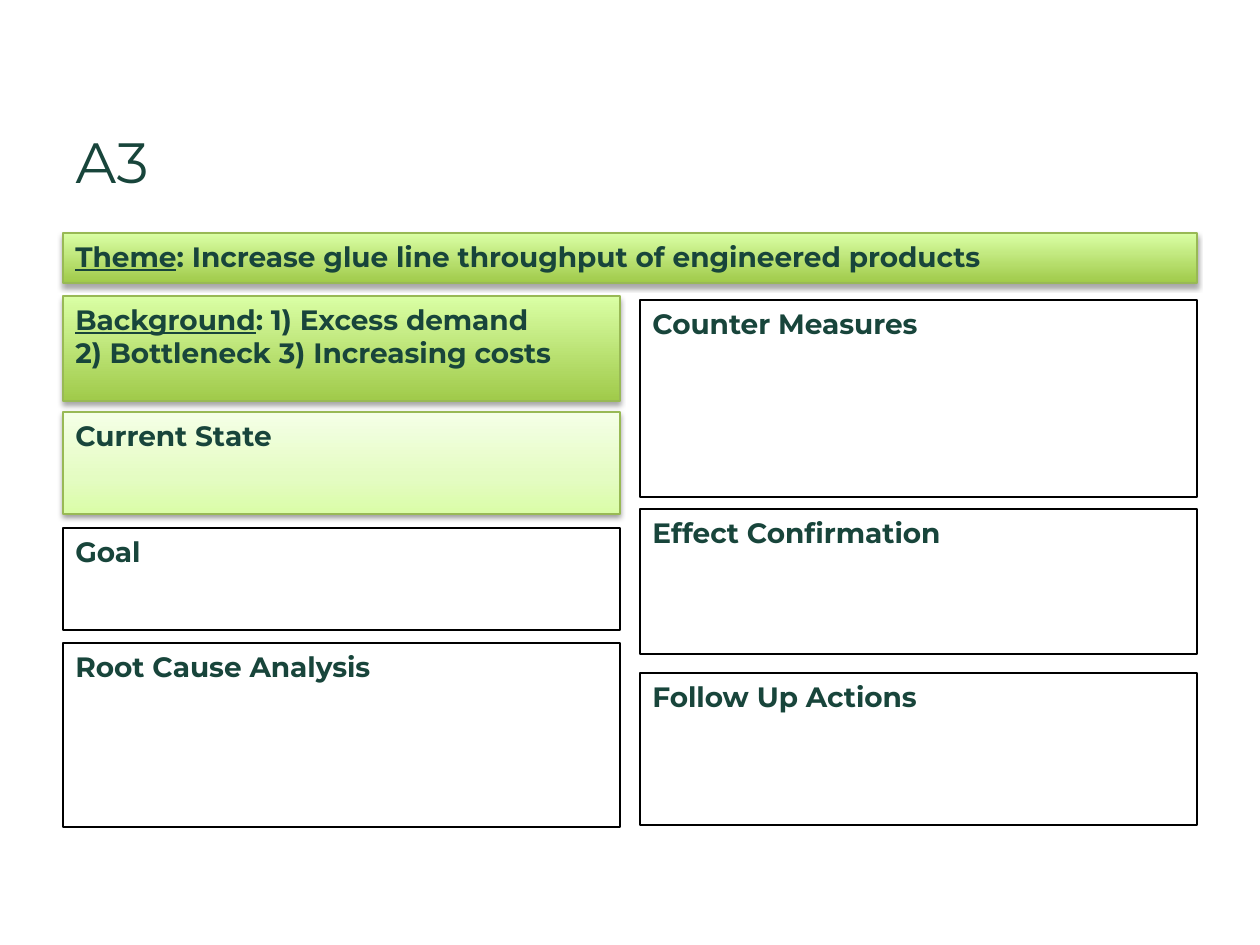
from dataclasses import dataclass
from typing import Optional

import pptx
import pptx.dml.color
import pptx.enum.shapes
import pptx.enum.text
import pptx.oxml
import pptx.oxml.ns
import pptx.util

PX_PER_INCH = 126


@dataclass(frozen=True)
class Theme:
    font: str = "Montserrat"
    ink: str = "18453B"
    outline: str = "000000"
    accent_line: str = "98B955"
    title_size: float = 32.4
    heading_size: int = 16
    line_width: float = 0.75


@dataclass(frozen=True)
class Finish:
    """Gradient stops (percent, colour), bottom to top, and a drop shadow."""
    stops: tuple[tuple[int, str], ...]
    shadow_alpha: int
    shadow_distance: float


@dataclass(frozen=True)
class Panel:
    left: int
    top: int
    width: int
    height: int
    lines: tuple[str, ...]
    label: str = ""  # underlined lead-in of the first line
    finish: Optional[Finish] = None


THEME = Theme()
STRONG = Finish(((0, "A0CA4A"), (100, "DAFFA5")), 35, 1.8)
PALE = Finish(((0, "DAFDA7"), (35, "E4FCC2"), (100, "F5FFE7")), 38, 1.6)

LEFT, RIGHT = 63, 640
FULL_WIDTH, COLUMN_WIDTH = 1134, 557

PANELS = (
    Panel(LEFT, 233, FULL_WIDTH, 50,
          (": Increase glue line throughput of engineered products",), "Theme", STRONG),
    # Left column
    Panel(LEFT, 296, COLUMN_WIDTH, 105,
          (": 1) Excess demand", "2) Bottleneck 3) Increasing costs"), "Background", STRONG),
    Panel(LEFT, 412, COLUMN_WIDTH, 102, ("Current State",), finish=PALE),
    Panel(LEFT, 528, COLUMN_WIDTH, 102, ("Goal",)),
    Panel(LEFT, 643, COLUMN_WIDTH, 184, ("Root Cause Analysis",)),
    # Right column
    Panel(RIGHT, 300, COLUMN_WIDTH, 197, ("Counter Measures",)),
    Panel(RIGHT, 509, COLUMN_WIDTH, 145, ("Effect Confirmation",)),
    Panel(RIGHT, 673, COLUMN_WIDTH, 152, ("Follow Up Actions",)),
)


def px(length: int) -> int:
    return round(length * pptx.util.Inches(1) / PX_PER_INCH)


def rgb(colour: str) -> pptx.dml.color.RGBColor:
    return pptx.dml.color.RGBColor.from_string(colour)


def add_run(paragraph, text: str, size: float, bold: bool, underline: bool = False) -> None:
    run = paragraph.add_run()
    run.text = text
    font = run.font
    font.name, font.size = THEME.font, pptx.util.Pt(size)
    font.bold, font.underline = bold, underline
    font.color.rgb = rgb(THEME.ink)


def prepare_frame(frame) -> None:
    frame.word_wrap = True
    frame.auto_size = pptx.enum.text.MSO_AUTO_SIZE.NONE
    frame.vertical_anchor = pptx.enum.text.MSO_ANCHOR.TOP
    frame.margin_left = frame.margin_right = pptx.util.Inches(0.1)
    frame.margin_top = frame.margin_bottom = pptx.util.Inches(0.05)


def apply_finish(shape, finish: Finish) -> None:
    ns = pptx.oxml.ns.nsdecls("a")
    shape.fill.gradient()
    shape.fill.gradient_angle = 90
    properties = shape.fill._xPr
    stop_list = properties.find(".//" + pptx.oxml.ns.qn("a:gsLst"))
    for stop in list(stop_list):
        stop_list.remove(stop)
    for percent, colour in finish.stops:
        stop_list.append(pptx.oxml.parse_xml(
            f'<a:gs {ns} pos="{percent * 1000}"><a:srgbClr val="{colour}"/></a:gs>'))
    effects = properties.find(pptx.oxml.ns.qn("a:effectLst"))
    effects.append(pptx.oxml.parse_xml(
        f'<a:outerShdw {ns} blurRad="{pptx.util.Pt(3.1)}" '
        f'dist="{pptx.util.Pt(finish.shadow_distance)}" dir="5400000" rotWithShape="0">'
        f'<a:srgbClr val="000000"><a:alpha val="{finish.shadow_alpha * 1000}"/></a:srgbClr>'
        f'</a:outerShdw>'))


def add_title(slide, text: str) -> None:
    title = slide.shapes.title
    title.left, title.top = px(LEFT), px(121)
    title.width, title.height = px(FULL_WIDTH), px(67)
    prepare_frame(title.text_frame)
    paragraph = title.text_frame.paragraphs[0]
    paragraph.alignment = pptx.enum.text.PP_ALIGN.LEFT
    add_run(paragraph, text, THEME.title_size, bold=False)


def add_panel(slide, panel: Panel) -> None:
    shape = slide.shapes.add_shape(
        pptx.enum.shapes.MSO_SHAPE.RECTANGLE,
        px(panel.left), px(panel.top), px(panel.width), px(panel.height))
    shape.shadow.inherit = False
    shape.line.width = pptx.util.Pt(THEME.line_width)
    if panel.finish:
        apply_finish(shape, panel.finish)
        shape.line.color.rgb = rgb(THEME.accent_line)
    else:
        shape.fill.background()
        shape.line.color.rgb = rgb(THEME.outline)

    frame = shape.text_frame
    prepare_frame(frame)
    for index, line in enumerate(panel.lines):
        paragraph = frame.add_paragraph() if index else frame.paragraphs[0]
        paragraph.alignment = pptx.enum.text.PP_ALIGN.LEFT
        if panel.label and index == 0:
            add_run(paragraph, panel.label, THEME.heading_size, bold=True, underline=True)
        add_run(paragraph, line, THEME.heading_size, bold=True)


def main() -> None:
    deck = pptx.Presentation()
    deck.slide_width, deck.slide_height = pptx.util.Inches(10), pptx.util.Inches(7.5)
    slide = deck.slides.add_slide(deck.slide_layouts.get_by_name("Title Only"))
    add_title(slide, "A3")
    for panel in PANELS:
        add_panel(slide, panel)
    deck.save("out.pptx")


if __name__ == "__main__":
    main()
